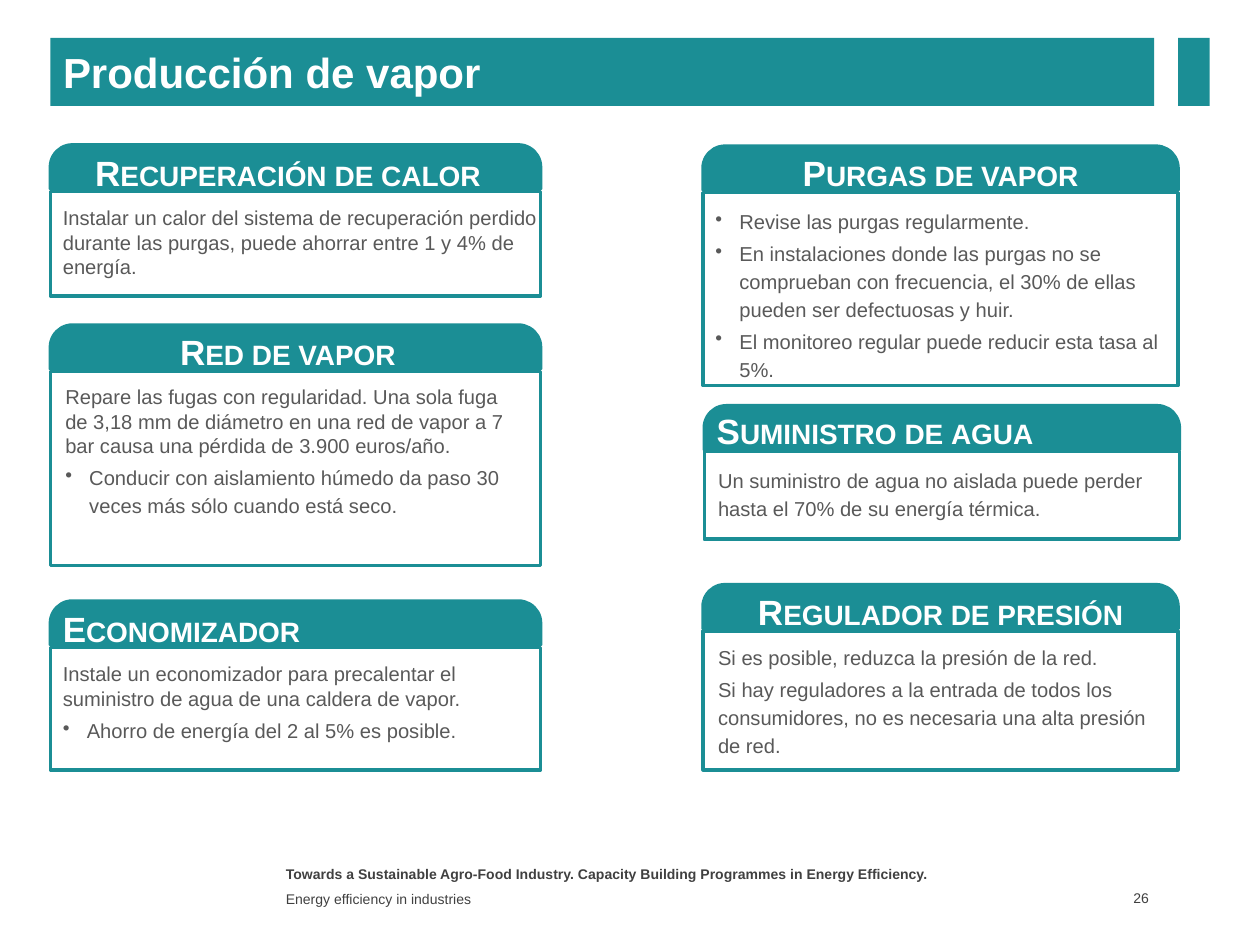
from dataclasses import dataclass

from pptx import Presentation
from pptx import util as u
from pptx.dml.color import RGBColor
from pptx.enum import shapes, text
from pptx.oxml.ns import qn
from lxml import etree

TEAL, WHITE, GREY, DARK = "1B8E95", "FFFFFF", "595959", "404040"
LEFT, CENTER, RIGHT = text.PP_ALIGN.LEFT, text.PP_ALIGN.CENTER, text.PP_ALIGN.RIGHT
TAB_HEIGHT = 0.35


@dataclass
class Panel:
    """A titled box; each line is (text, bulleted, line spacing in points)."""
    title: str
    left: float
    tab_top: float
    width: float
    body_top: float
    body_height: float
    text_box: tuple
    lines: list
    align: int = CENTER
    title_top: float = 0


PANELS = [
    Panel("Recuperación de calor", 0.4, 1.15, 3.89, 1.52, 0.83, (0.4, 1.58, 4.01, 0.7), [
        ("Instalar un calor del sistema de recuperación perdido durante las purgas, "
         "puede ahorrar entre 1 y 4% de energía.", False, 14)]),
    Panel("Red de vapor", 0.4, 2.58, 3.89, 2.95, 1.54, (0.42, 3, 3.77, 1.28), [
        ("Repare las fugas con regularidad. Una sola fuga de 3,18 mm de diámetro en una red "
         "de vapor a 7 bar causa una pérdida de 3.900 euros/año.", False, 14),
        ("Conducir con aislamiento húmedo da paso 30 veces más sólo cuando está seco.", True, 16)],
        title_top=-0.01),
    Panel("Economizador", 0.4, 4.77, 3.89, 5.14, 0.97, (0.4, 5.2, 3.78, 0.91), [
        ("Instale un economizador para precalentar el suministro de agua de una caldera "
         "de vapor.", False, 14),
        ("Ahorro de energía del 2 al 5% es posible.", True, 16)], LEFT),
    Panel("Purgas de vapor", 5.58, 1.16, 3.77, 1.53, 1.53, (5.58, 1.58, 3.77, 1.35), [
        ("Revise las purgas regularmente.", True, 16),
        ("En instalaciones donde las purgas no se comprueban con frecuencia, el 30% de ellas "
         "pueden ser defectuosas y huir.", True, 16),
        ("El monitoreo regular puede reducir esta tasa al 5%.", True, 16)], title_top=-0.01),
    Panel("Suministro de agua", 5.59, 3.22, 3.77, 3.58, 0.7, (5.6, 3.64, 3.75, 0.66), [
        ("Un suministro de agua no aislada puede perder hasta el 70% de su energía térmica.",
         False, 16)], LEFT, -0.02),
    Panel("Regulador de presión", 5.58, 4.64, 3.77, 5.01, 1.1, (5.6, 5.04, 3.78, 1), [
        ("Si es posible, reduzca la presión de la red.", False, 16),
        ("Si hay reguladores a la entrada de todos los consumidores, no es necesaria una alta "
         "presión de red.", False, 16)]),
]


def color(value):
    """Turn a hex string into a colour."""
    return RGBColor.from_string(value)


def style_runs(paragraph, size, hex_color, bold=False):
    """Format every run of a paragraph."""
    for run in paragraph.runs:
        run.font.name = "Arial"
        run.font.size = u.Pt(size)
        run.font.bold = bold
        run.font.color.rgb = color(hex_color)


def add_text(slide, box, content, size, hex_color, bold=False, align=LEFT,
             anchor=text.MSO_ANCHOR.TOP):
    """Add a wrapped one-paragraph text box."""
    shape = slide.shapes.add_textbox(*map(u.Inches, box))
    frame = shape.text_frame
    frame.word_wrap = True
    frame.vertical_anchor = anchor
    frame.text = content
    paragraph = frame.paragraphs[0]
    paragraph.alignment = align
    style_runs(paragraph, size, hex_color, bold)
    return shape


def add_block(slide, kind, box, fill=None, line=None):
    """Add a flat shape with an optional fill and outline."""
    shape = slide.shapes.add_shape(kind, *map(u.Inches, box))
    shape.shadow.inherit = False
    if fill:
        shape.fill.solid()
        shape.fill.fore_color.rgb = color(fill)
    else:
        shape.fill.background()
    if line:
        shape.line.color.rgb = color(line)
        shape.line.width = u.Pt(2)
    else:
        shape.line.fill.background()
    return shape


def add_bullet(paragraph):
    """Give a paragraph a hanging bullet."""
    properties = paragraph._p.get_or_add_pPr()
    properties.set("marL", str(u.Inches(0.19)))
    properties.set("indent", str(-u.Inches(0.19)))
    etree.SubElement(properties, qn("a:buChar")).set("char", "•")


def add_body(slide, box, lines):
    """Add the text of a panel."""
    frame = slide.shapes.add_textbox(*map(u.Inches, box)).text_frame
    frame.word_wrap = True
    for index, (content, bulleted, spacing) in enumerate(lines):
        paragraph = frame.add_paragraph() if index else frame.paragraphs[0]
        paragraph.text = content
        if bulleted:
            add_bullet(paragraph)
        paragraph.line_spacing = u.Pt(spacing)
        paragraph.space_before = u.Pt(2.3 if index else 0)
        style_runs(paragraph, 11.5, GREY)


def add_panel(slide, panel):
    """Add a framed text with a rounded title tab."""
    add_body(slide, panel.text_box, panel.lines)
    add_block(slide, shapes.MSO_SHAPE.RECTANGLE,
              (panel.left, panel.body_top, panel.width, panel.body_height), line=TEAL)
    tab = add_block(slide, shapes.MSO_SHAPE.ROUND_2_SAME_RECTANGLE,
                    (panel.left, panel.tab_top, panel.width, TAB_HEIGHT), TEAL, TEAL)
    tab.adjustments[0] = 0.5
    title = add_text(slide, (panel.left, panel.tab_top + panel.title_top, 3.77, 0.44),
                     panel.title, 20, WHITE, True, panel.align)
    run = title.text_frame.paragraphs[0].runs[0]
    run.font._element.set("cap", "small")


def set_title(slide, content):
    """Turn the title placeholder into the heading bar."""
    title = slide.shapes.title
    title.left, title.top, title.width, title.height = map(u.Inches, (0.4, 0.3, 8.76, 0.54))
    title.fill.solid()
    title.fill.fore_color.rgb = color(TEAL)
    frame = title.text_frame
    frame.text = content
    frame.auto_size = text.MSO_AUTO_SIZE.NONE
    frame.vertical_anchor = text.MSO_ANCHOR.MIDDLE
    frame.paragraphs[0].alignment = LEFT
    style_runs(frame.paragraphs[0], 24, WHITE, True)


def add_footer(slide):
    """Add the programme name, the subject and the page number."""
    middle = text.MSO_ANCHOR.MIDDLE
    add_text(slide, (2.17, 6.82, 5.5, 0.21),
             "Towards a Sustainable Agro-Food Industry. "
             "Capacity Building Programmes in Energy Efficiency.", 8, DARK, True)
    add_text(slide, (2.17, 7.04, 5.5, 0.19), "Energy efficiency in industries", 8, DARK,
             anchor=middle)
    number = add_text(slide, (8.6, 7.03, 0.56, 0.2), "26", 8, DARK, align=RIGHT, anchor=middle)
    number.text_frame.margin_right = u.Inches(0.04)


def main():
    """Build the slide and save it."""
    presentation = Presentation()
    presentation.slide_width, presentation.slide_height = u.Inches(10), u.Inches(7.5)
    slide = presentation.slides.add_slide(presentation.slide_layouts[5])
    set_title(slide, "Producción de vapor")
    add_block(slide, shapes.MSO_SHAPE.RECTANGLE, (9.35, 0.3, 0.25, 0.54), TEAL)
    for panel in PANELS:
        add_panel(slide, panel)
    add_footer(slide)
    presentation.save("out.pptx")


if __name__ == "__main__":
    main()
